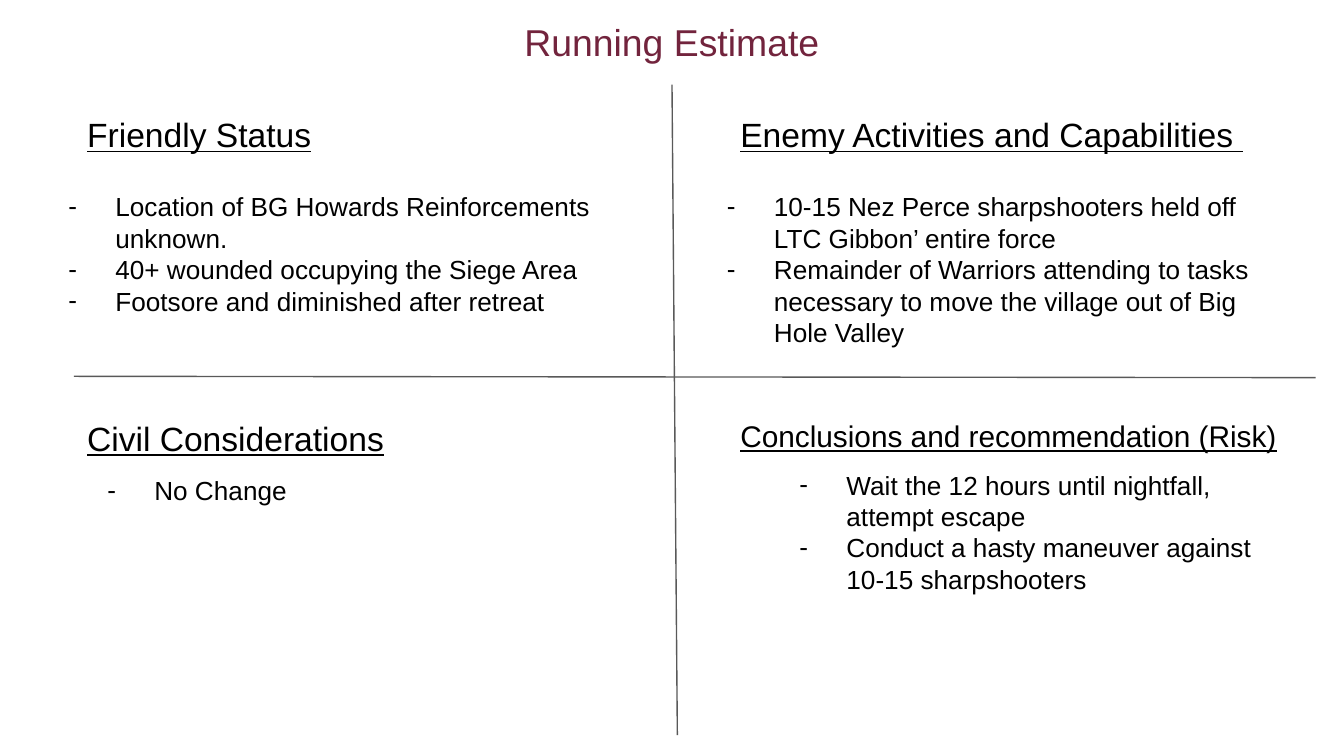
from lxml.etree import SubElement
from pptx import Presentation
from pptx.dml.color import RGBColor
from pptx.enum.shapes import MSO_CONNECTOR
from pptx.enum.text import MSO_ANCHOR, MSO_AUTO_SIZE, PP_ALIGN
from pptx.oxml.ns import qn
from pptx.util import Inches, Pt

WIDTH = 10
HEIGHT = WIDTH * 9 / 16
MAROON = RGBColor(0x72, 0x24, 0x3D)
BLACK = RGBColor(0, 0, 0)
GRAY = RGBColor(0x59, 0x59, 0x59)
FONT = "Arial"

# Content: each quadrant has a grid cell, a heading and a dashed list
TITLE = "Running Estimate"
QUADRANTS = [
    dict(column=0, row=0, heading="Friendly Status", heading_size=18,
         heading_area=(3.18, 0.5), list_area=(0.26, 1.32, 4.59, 1.14),
         items=["Location of BG Howards Reinforcements unknown.",
                "40+ wounded occupying the Siege Area",
                "Footsore and diminished after retreat"]),
    dict(column=1, row=0, heading="Enemy Activities and Capabilities ", heading_size=18,
         heading_area=(4.38, 0.5), list_area=(5.16, 1.32, 4.38, 1.38),
         items=["10-15 Nez Perce sharpshooters held off LTC Gibbon’ entire force",
                "Remainder of Warriors attending to tasks necessary to move "
                "the village out of Big Hole Valley"]),
    dict(column=0, row=1, heading="Civil Considerations", heading_size=18,
         heading_area=(3.26, 0.5), list_area=(0.55, 3.43, 2.46, 0.44),
         items=["No Change"]),
    dict(column=1, row=1, heading="Conclusions and recommendation (Risk)", heading_size=16,
         heading_area=(4.59, 0.47), list_area=(5.7, 3.39, 3.9, 1.38),
         items=["Wait the 12 hours until nightfall, attempt escape",
                "Conduct a hasty maneuver against 10-15 sharpshooters"]),
]
COLUMN_LEFTS = (0.55, 5.41)
ROW_TOPS = (0.75, 3.01)
DIVIDERS = [((5, 0.63), (5.04, 5.47)), ((0.55, 2.8), (9.79, 2.81))]


def add_dash(para):
    """Give a paragraph a hanging dash."""
    properties = para._p.get_or_add_pPr()
    properties.set("marL", str(Inches(0.5)))
    properties.set("indent", str(Inches(-0.35)))
    color = SubElement(properties, qn("a:buClr"))
    SubElement(color, qn("a:srgbClr")).set("val", str(BLACK))
    SubElement(properties, qn("a:buFont")).set("typeface", FONT)
    SubElement(properties, qn("a:buChar")).set("char", "-")


def add_text(page, area, lines, size=14, color=BLACK, underline=None, dash=False,
             align=PP_ALIGN.LEFT, anchor=MSO_ANCHOR.TOP, inset=0.1,
             auto_size=MSO_AUTO_SIZE.SHAPE_TO_FIT_TEXT):
    box = page.shapes.add_textbox(*map(Inches, area))
    frame = box.text_frame
    frame.word_wrap = True
    frame.auto_size = auto_size
    frame.vertical_anchor = anchor
    frame.margin_left = frame.margin_right = Inches(inset)
    frame.margin_top = frame.margin_bottom = Inches(inset)
    for index, line in enumerate(lines):
        para = frame.add_paragraph() if index else frame.paragraphs[0]
        para.alignment = align
        if dash:
            add_dash(para)
        span = para.add_run()
        span.text = line
        span.font.name = FONT
        span.font.size = Pt(size)
        span.font.color.rgb = color
        span.font.underline = underline


def add_divider(page, start, end):
    line = page.shapes.add_connector(MSO_CONNECTOR.STRAIGHT, *map(Inches, start + end))
    line.line.color.rgb = GRAY
    line.line.width = Pt(0.75)
    SubElement(line._element.spPr, qn("a:effectLst"))


def main():
    deck = Presentation()
    deck.slide_width, deck.slide_height = Inches(WIDTH), Inches(HEIGHT)
    page = deck.slides.add_slide(deck.slide_layouts[6])

    # Title
    add_text(page, (0.1 * WIDTH, 0, 0.8 * WIDTH, 0.62), [TITLE], size=20, color=MAROON,
             align=PP_ALIGN.CENTER, anchor=MSO_ANCHOR.MIDDLE, inset=0.05,
             auto_size=MSO_AUTO_SIZE.NONE)

    # Cross that separates the quadrants
    for start, end in DIVIDERS:
        add_divider(page, start, end)

    # Headings and lists
    for quadrant in QUADRANTS:
        corner = COLUMN_LEFTS[quadrant["column"]], ROW_TOPS[quadrant["row"]]
        add_text(page, corner + quadrant["heading_area"], [quadrant["heading"]],
                 size=quadrant["heading_size"], underline=True)
        add_text(page, quadrant["list_area"], quadrant["items"], dash=True)

    deck.save("out.pptx")


if __name__ == "__main__":
    main()
